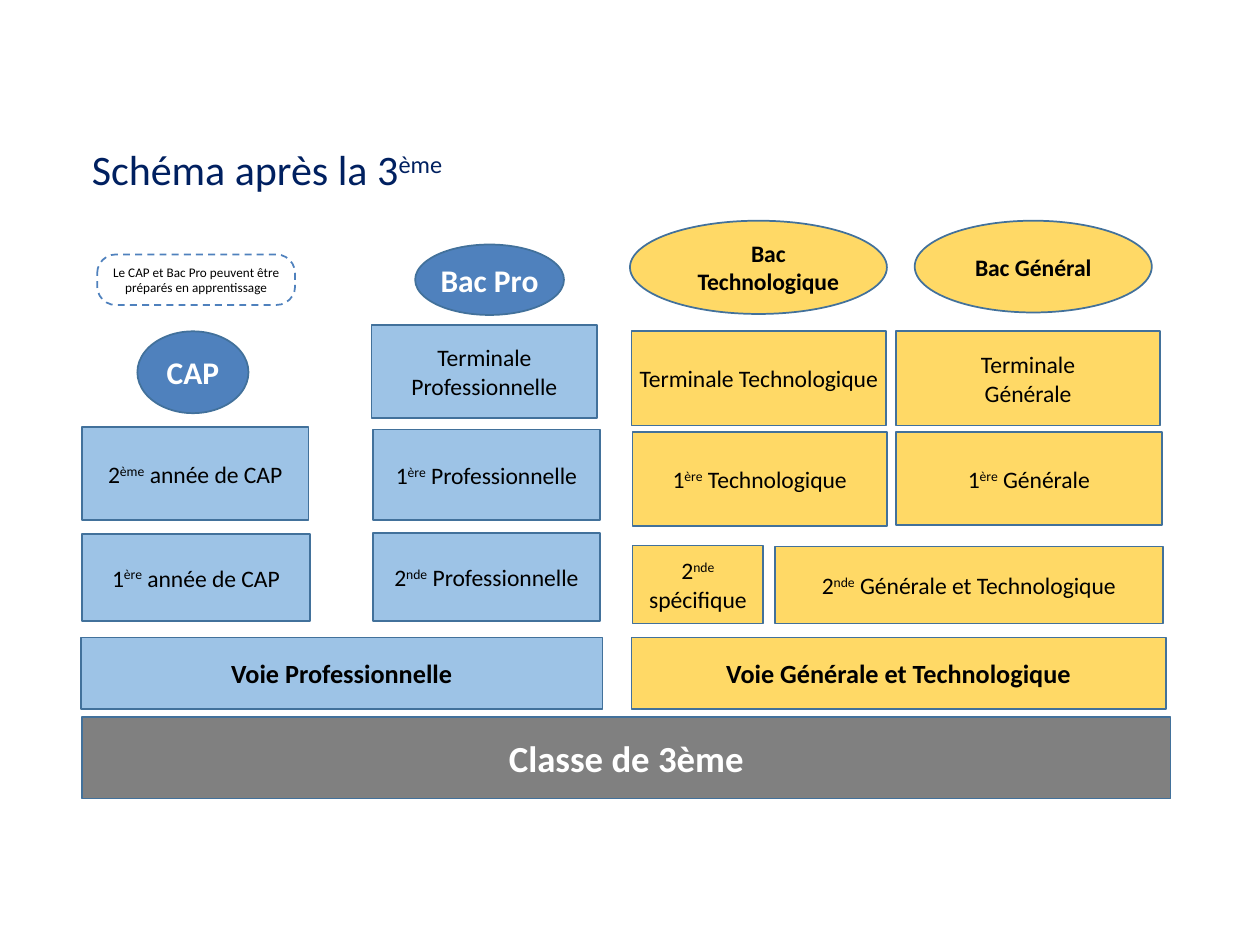
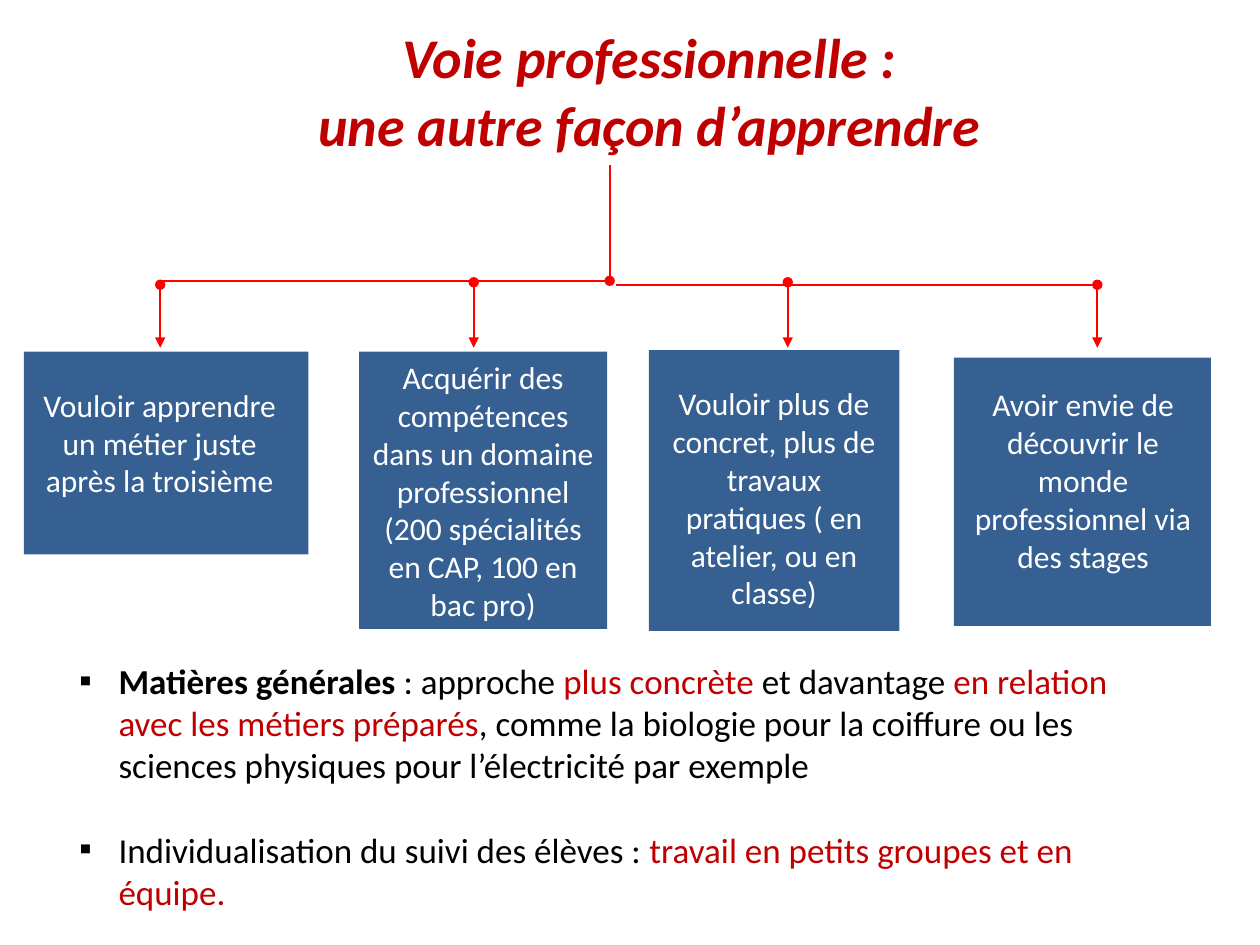
from dataclasses import dataclass

from lxml.etree import SubElement
from pptx import Presentation
from pptx.dml.color import RGBColor
from pptx.enum.dml import MSO_LINE
from pptx.enum.shapes import MSO_CONNECTOR, MSO_SHAPE
from pptx.enum.text import MSO_ANCHOR, MSO_AUTO_SIZE, PP_ALIGN
from pptx.oxml.ns import qn
from pptx.util import Cm, Pt


@dataclass(frozen=True)
class Theme:
    font: str = "Calibri"
    black: str = "000000"
    white: str = "FFFFFF"
    navy: str = "002060"
    crimson: str = "C00000"
    red: str = "FF0000"
    grey: str = "808080"
    light_blue: str = "9DC3E6"
    blue: str = "4F81BD"
    deep_blue: str = "376092"
    yellow: str = "FFD966"
    outline: str = "42719B"
    title_size: float = 24
    large_title_size: float = 32
    class_size: float = 21
    track_size: float = 15
    year_size: float = 13.5
    diploma_size: float = 18
    note_size: float = 7.5
    reason_size: float = 18
    body_size: float = 20


THEME = Theme()


@dataclass(frozen=True)
class BlockStyle:
    fill: str
    size: float
    color: str = THEME.black
    bold: bool = False
    form: MSO_SHAPE = MSO_SHAPE.RECTANGLE
    outline: str | None = THEME.outline
    anchor: MSO_ANCHOR = MSO_ANCHOR.MIDDLE


@dataclass(frozen=True)
class Block:
    """A filled shape with centred text; lengths and insets (left, top, right) in cm."""
    text: str
    style: BlockStyle
    left: float
    top: float
    width: float
    height: float
    insets: tuple[float, float, float] = (0.1, 0.1, 0.1)


@dataclass(frozen=True)
class Link:
    """A straight line; lengths in cm, ends named as arrowhead types."""
    start: tuple[float, float]
    end: tuple[float, float]
    head: str | None = None
    tail: str | None = None


CLASS = BlockStyle(THEME.grey, THEME.class_size, THEME.white, True)
PRO_TRACK = BlockStyle(THEME.light_blue, THEME.track_size, bold=True)
GENERAL_TRACK = BlockStyle(THEME.yellow, THEME.track_size, bold=True)
PRO_YEAR = BlockStyle(THEME.light_blue, THEME.year_size)
GENERAL_YEAR = BlockStyle(THEME.yellow, THEME.year_size)
PRO_DIPLOMA = BlockStyle(THEME.blue, THEME.diploma_size, THEME.white, True, MSO_SHAPE.OVAL)
GENERAL_DIPLOMA = BlockStyle(THEME.yellow, THEME.year_size, bold=True, form=MSO_SHAPE.OVAL)
NOTE = BlockStyle(THEME.white, THEME.note_size, form=MSO_SHAPE.ROUNDED_RECTANGLE,
                  outline=THEME.blue)
REASON = BlockStyle(THEME.deep_blue, THEME.reason_size, THEME.white, outline=None,
                    anchor=MSO_ANCHOR.TOP)

PATHWAY_BLOCKS = [
    Block("Classe de 3ème", CLASS, 1.65, 14.45, 21.95, 1.65),
    Block("Voie Professionnelle", PRO_TRACK, 1.63, 12.85, 10.52, 1.45),
    Block("Voie Générale et Technologique", GENERAL_TRACK, 12.73, 12.85, 10.77, 1.45),
    Block("1^ère^ année de CAP", PRO_YEAR, 1.65, 10.77, 4.6, 1.75),
    Block("2^ème^ année de CAP", PRO_YEAR, 1.65, 8.61, 4.57, 1.88),
    Block("2^nde^ Professionnelle", PRO_YEAR, 7.52, 10.74, 4.57, 1.78),
    Block("1^ère^ Professionnelle", PRO_YEAR, 7.52, 8.66, 4.57, 1.83),
    Block("Terminale Professionnelle", PRO_YEAR, 7.49, 6.55, 4.55, 1.88),
    Block("CAP", PRO_DIPLOMA, 2.77, 6.68, 2.24, 1.65),
    Block("Bac Pro", PRO_DIPLOMA, 8.37, 4.93, 3, 1.42, (0, 0.1, 0)),
    Block("2^nde^ spécifique", GENERAL_YEAR, 12.75, 11, 2.64, 1.57),
    Block("2^nde^ Générale et Technologique", GENERAL_YEAR, 15.62, 11.02, 7.82, 1.55),
    Block("1^ère^ Technologique", GENERAL_YEAR, 12.75, 8.71, 5.13, 1.9),
    Block("1^ère^ Générale", GENERAL_YEAR, 18.06, 8.71, 5.36, 1.88),
    Block("Terminale Technologique", GENERAL_YEAR, 12.73, 6.68, 5.13, 1.9),
    Block("Terminale\nGénérale", GENERAL_YEAR, 18.06, 6.68, 5.33, 1.9),
    Block("Bac Technologique", GENERAL_DIPLOMA, 12.7, 4.45, 5.18, 1.88, (0.5, 0.1, 0.1)),
    Block("Bac Général", GENERAL_DIPLOMA, 18.44, 4.45, 4.78, 1.85),
]
APPRENTICESHIP_NOTE = Block("Le CAP et Bac Pro peuvent être préparés en apprentissage",
                            NOTE, 1.96, 5.13, 3.99, 1.02)

REASON_BLOCKS = [
    Block("Vouloir apprendre un métier juste après la troisième",
          REASON, 0.48, 7.09, 5.74, 4.09, (0.15, 0.69, 0.41)),
    Block("Acquérir des compétences dans un domaine professionnel "
          "(200 spécialités en CAP, 100 en bac pro)",
          REASON, 7.24, 7.09, 5, 5.59, (0.25, 0.13, 0.25)),
    Block("Vouloir plus de concret, plus de travaux pratiques ( en atelier, ou en classe)",
          REASON, 13.08, 7.06, 5.05, 5.66, (0.42, 0.69, 0.42)),
    Block("Avoir envie de découvrir le monde professionnel via des stages",
          REASON, 19.23, 7.21, 5.18, 5.41, (0.41, 0.56, 0.38)),
]
ARROW_TIP = 7.01
BRANCHES = [(3.23, 5.74), (9.55, 5.69), (15.88, 5.69), (22.12, 5.74)]
REASON_LINKS = [
    Link((12.29, 3.33), (12.29, 5.66), tail="oval"),
    Link((3.2, 5.66), (12.32, 5.66)),
    Link((12.42, 5.74), (15.93, 5.74)),
    Link((15.85, 5.74), (22.05, 5.74)),
    *(Link((x, y), (x, ARROW_TIP), "oval", "triangle") for x, y in BRANCHES),
]

BULLETS = [
    [("Matières générales ", THEME.black, True),
     (": approche ", THEME.black, False),
     ("plus concrète ", THEME.crimson, False),
     ("et davantage ", THEME.black, False),
     ("en relation avec les métiers préparés", THEME.crimson, False),
     (", comme la biologie pour la coiffure ou les sciences physiques "
      "pour l’électricité par exemple", THEME.black, False)],
    [("Individualisation du suivi des élèves : ", THEME.black, False),
     ("travail en petits groupes et en équipe.", THEME.crimson, False)],
]


def add_text(paragraph, text: str, *, size: float, color: str = THEME.black,
             bold: bool = False, italic: bool = False) -> None:
    """Append text to the paragraph; parts between ^ marks are superscript."""
    for index, part in enumerate(text.split("^")):
        if not part:
            continue
        run = paragraph.add_run()
        run.text = part
        font = run.font
        font.name, font.size, font.bold, font.italic = THEME.font, Pt(size), bold, italic
        font.color.rgb = RGBColor.from_string(color)
        if index % 2:
            run._r.get_or_add_rPr().set("baseline", "30000")


def fill_frame(frame, text: str, alignment: PP_ALIGN, **text_format) -> None:
    """Write one aligned paragraph for each line of text."""
    for index, line in enumerate(text.split("\n")):
        paragraph = frame.add_paragraph() if index else frame.paragraphs[0]
        paragraph.alignment = alignment
        add_text(paragraph, line, **text_format)


def set_frame(frame, anchor: MSO_ANCHOR, left: float, top: float, right: float,
              bottom: float) -> None:
    frame.word_wrap = True
    frame.auto_size = MSO_AUTO_SIZE.NONE
    frame.vertical_anchor = anchor
    frame.margin_left, frame.margin_top = Cm(left), Cm(top)
    frame.margin_right, frame.margin_bottom = Cm(right), Cm(bottom)


def add_titled_slide(presentation, text: str, box: tuple[float, float, float, float],
                     alignment: PP_ALIGN, anchor: MSO_ANCHOR, inset: float,
                     line_spacing: float = 1.0, **text_format):
    slide = presentation.slides.add_slide(presentation.slide_layouts[5])
    title = slide.shapes.title
    title.left, title.top, title.width, title.height = map(Cm, box)
    frame = title.text_frame
    set_frame(frame, anchor, inset, 0.13, inset, 0.13)
    fill_frame(frame, text, alignment, **text_format)
    for paragraph in frame.paragraphs:
        paragraph.line_spacing = line_spacing
    return slide


def add_block(slide, block: Block):
    style = block.style
    shape = slide.shapes.add_shape(style.form, Cm(block.left), Cm(block.top),
                                   Cm(block.width), Cm(block.height))
    shape.shadow.inherit = False
    shape.fill.solid()
    shape.fill.fore_color.rgb = RGBColor.from_string(style.fill)
    if style.outline:
        shape.line.color.rgb = RGBColor.from_string(style.outline)
        shape.line.width = Pt(1)
    else:
        shape.line.fill.background()
    left, top, right = block.insets
    set_frame(shape.text_frame, style.anchor, left, top, right, 0.1)
    fill_frame(shape.text_frame, block.text, PP_ALIGN.CENTER,
               size=style.size, color=style.color, bold=style.bold)
    return shape


def add_link(slide, link: Link) -> None:
    connector = slide.shapes.add_connector(MSO_CONNECTOR.STRAIGHT,
                                           *map(Cm, link.start + link.end))
    connector.line.color.rgb = RGBColor.from_string(THEME.red)
    connector.line.width = Pt(1.25)
    properties = connector._element.spPr
    line = properties.find(qn("a:ln"))
    for tag, end in (("a:headEnd", link.head), ("a:tailEnd", link.tail)):
        if end:
            SubElement(line, qn(tag), type=end)
    SubElement(properties, qn("a:effectLst"))


def set_bullet(paragraph) -> None:
    properties = paragraph._p.get_or_add_pPr()
    indent = Cm(0.79)
    properties.set("marL", str(indent))
    properties.set("indent", str(-indent))
    color = SubElement(properties, qn("a:buClr"))
    SubElement(color, qn("a:srgbClr"), val=THEME.black)
    SubElement(properties, qn("a:buFont"), typeface=THEME.font)
    SubElement(properties, qn("a:buChar"), char="▪")


def build_pathways(presentation) -> None:
    slide = add_titled_slide(presentation, "Schéma après la 3^ème^", (1.75, 2.63, 7.72, 1.68),
                             PP_ALIGN.LEFT, MSO_ANCHOR.MIDDLE, 0.1, 0.9,
                             size=THEME.title_size, color=THEME.navy)
    for block in PATHWAY_BLOCKS:
        add_block(slide, block)
    note = add_block(slide, APPRENTICESHIP_NOTE)
    note.adjustments[0] = 0.37
    note.line.dash_style = MSO_LINE.DASH


def build_reasons(presentation) -> None:
    slide = add_titled_slide(presentation, "Voie professionnelle :\nune autre façon d’apprendre",
                             (1.78, 0.33, 22.63, 2.95), PP_ALIGN.CENTER, MSO_ANCHOR.TOP, 0.25,
                             size=THEME.large_title_size, color=THEME.crimson,
                             bold=True, italic=True)
    for block in REASON_BLOCKS:
        add_block(slide, block)
    for link in REASON_LINKS:
        add_link(slide, link)
    frame = slide.shapes.add_textbox(Cm(1.35), Cm(13.16), Cm(22.15), Cm(5.8)).text_frame
    set_frame(frame, MSO_ANCHOR.TOP, 0.25, 0.13, 0.25, 0.13)
    for index, bullet in enumerate(BULLETS):
        paragraph = frame.add_paragraph() if index else frame.paragraphs[0]
        paragraph.space_before = Pt(24.4 if index else 0)
        set_bullet(paragraph)
        for text, color, bold in bullet:
            add_text(paragraph, text, size=THEME.body_size, color=color, bold=bold)


def main() -> None:
    presentation = Presentation()
    presentation.slide_width, presentation.slide_height = Cm(25.4), Cm(19.05)
    build_pathways(presentation)
    build_reasons(presentation)
    presentation.save("out.pptx")


if __name__ == "__main__":
    main()
